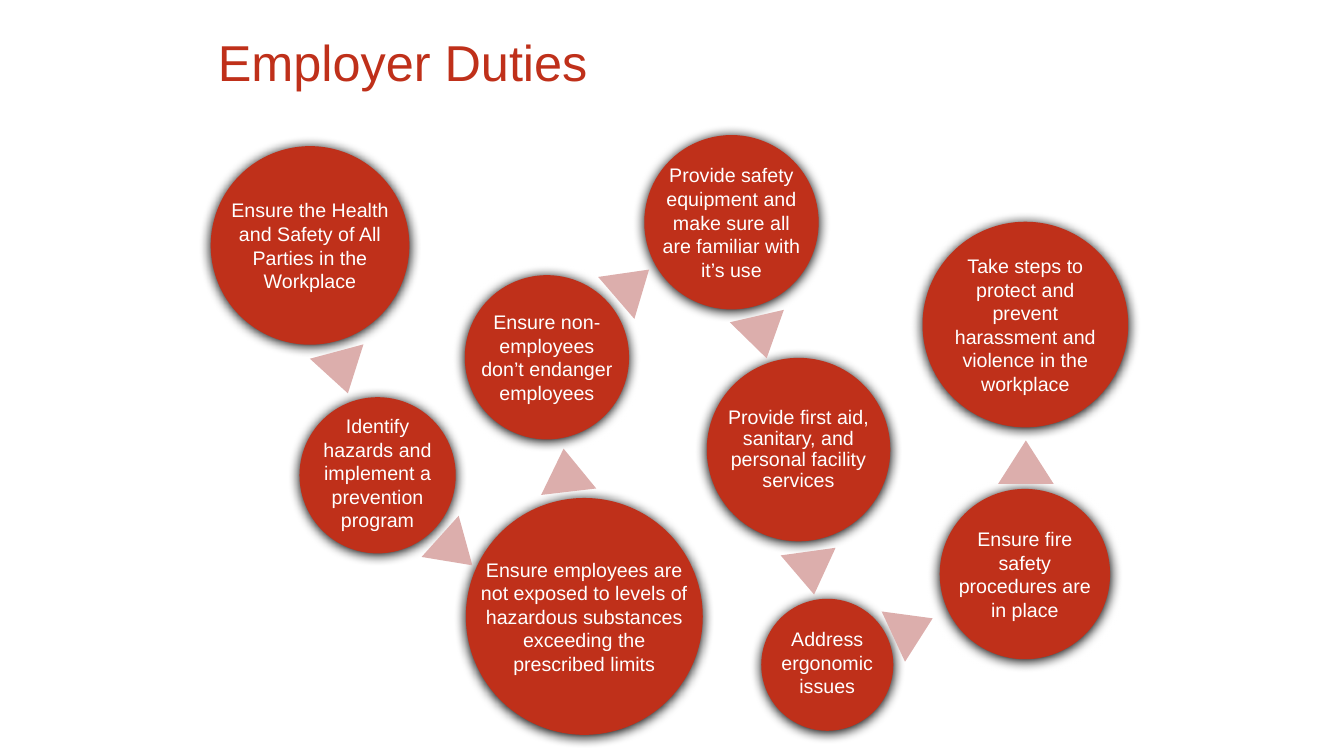
import pptx
import pptx.dml.color
import pptx.enum.shapes
import pptx.enum.text
import pptx.util
from lxml import etree
from pptx.util import Inches, Pt

TITLE = "Employer Duties"
RED, PINK, WHITE, BLACK = "BF301A", "DCAEAC", "FFFFFF", "000000"
FONT = "Arial"

# text, left, top, diameter, inset, line spacing, extra bottom inset
DUTIES = [
    ("Ensure the Health and Safety of All Parties in the Workplace", 2.09, 1.45, 1.97, 0.19, 1.0, 0),
    ("Identify hazards and implement a prevention program", 2.97, 3.94, 1.55, 0.12, 1.0, 0.05),
    ("Ensure employees are not exposed to levels of hazardous substances exceeding the prescribed limits",
     4.62, 4.94, 2.35, 0.12, 1.0, 0),
    ("Ensure non-employees don’t endanger employees", 4.61, 2.73, 1.63, 0.12, 1.0, 0),
    ("Provide safety equipment and make sure all are familiar with it’s use", 6.39, 1.34, 1.73, 0.12, 1.0, 0),
    ("Provide first aid, sanitary, and personal facility services", 7.01, 3.55, 1.82, 0.12, 0.9, 0),
    ("Address ergonomic issues", 7.55, 5.94, 1.31, 0.12, 1.0, 0.05),
    ("Ensure fire safety procedures are in place", 9.32, 4.85, 1.69, 0.12, 1.0, 0),
    ("Take steps to protect and prevent harassment and violence in the workplace",
     9.15, 2.2, 2.04, 0.19, 1.0, 0),
]
# left, top, rotation of the pointer that follows each duty but the last
POINTERS = [
    (3.12, 3.48, 165), (4.25, 5.25, 132), (5.34, 4.45, 353.3), (6, 2.6, 49.2),
    (7.28, 3.13, 167), (7.77, 5.47, 172.1), (8.78, 6.01, 65.1), (9.9, 4.37, 0),
]
POINTER_WIDTH, POINTER_HEIGHT = 0.55, 0.43
OVAL_TEXT_MARGIN = 0.1464  # share of the diameter an oval keeps free of text on each side
DRAWING = "http://schemas.openxmlformats.org/drawingml/2006/main"


def color(value):
    return pptx.dml.color.RGBColor.from_string(value)


def add_text(paragraph, text, size, text_color):
    run = paragraph.add_run()
    run.text = text
    run.font.name = FONT
    run.font.size = Pt(size)
    run.font.color.rgb = color(text_color)


def add_flat_shape(slide, kind, left, top, width, height, fill):
    shape = slide.shapes.add_shape(kind, Inches(left), Inches(top), Inches(width), Inches(height))
    shape.shadow.inherit = False
    shape.fill.solid()
    shape.fill.fore_color.rgb = color(fill)
    shape.line.fill.background()
    return shape


def add_soft_shadow(shape):
    effects = shape._element.spPr.find(f"{{{DRAWING}}}effectLst")
    shadow = etree.SubElement(effects, f"{{{DRAWING}}}outerShdw", blurRad=str(Pt(8.5)),
                              dist=str(Pt(1)), dir="5400000", rotWithShape="0")
    etree.SubElement(shadow, f"{{{DRAWING}}}srgbClr", val=BLACK)


def add_duty(slide, text, left, top, diameter, inset, spacing, extra_bottom):
    circle = add_flat_shape(slide, pptx.enum.shapes.MSO_SHAPE.OVAL, left, top, diameter, diameter, RED)
    add_soft_shadow(circle)
    frame = circle.text_frame
    frame.word_wrap = True
    frame.vertical_anchor = pptx.enum.text.MSO_ANCHOR.MIDDLE
    # Text may reach past the oval's inner rectangle, up to the inset from its bounds
    margin = inset - OVAL_TEXT_MARGIN * diameter
    frame.margin_left = frame.margin_right = frame.margin_top = Inches(margin)
    frame.margin_bottom = Inches(margin + extra_bottom)
    paragraph = frame.paragraphs[0]
    paragraph.alignment = pptx.enum.text.PP_ALIGN.CENTER
    paragraph.line_spacing = spacing
    add_text(paragraph, text, 14, WHITE)


def add_title(slide):
    title = slide.shapes.title
    title.left, title.top, title.width, title.height = map(Inches, (2.06, 0.35, 9.13, 0.59))
    frame = title.text_frame
    frame.vertical_anchor = pptx.enum.text.MSO_ANCHOR.MIDDLE
    paragraph = frame.paragraphs[0]
    paragraph.alignment = pptx.enum.text.PP_ALIGN.LEFT
    paragraph.line_spacing = 0.9
    add_text(paragraph, TITLE, 36, RED)


def main():
    presentation = pptx.Presentation()
    presentation.slide_width, presentation.slide_height = Inches(13.33), Inches(7.5)
    slide = presentation.slides.add_slide(presentation.slide_layouts[5])
    add_title(slide)
    for duty in DUTIES:
        add_duty(slide, *duty)
    for left, top, rotation in POINTERS:
        pointer = add_flat_shape(slide, pptx.enum.shapes.MSO_SHAPE.ISOSCELES_TRIANGLE,
                                 left, top, POINTER_WIDTH, POINTER_HEIGHT, PINK)
        pointer.rotation = rotation
    presentation.save("out.pptx")


if __name__ == "__main__":
    main()
